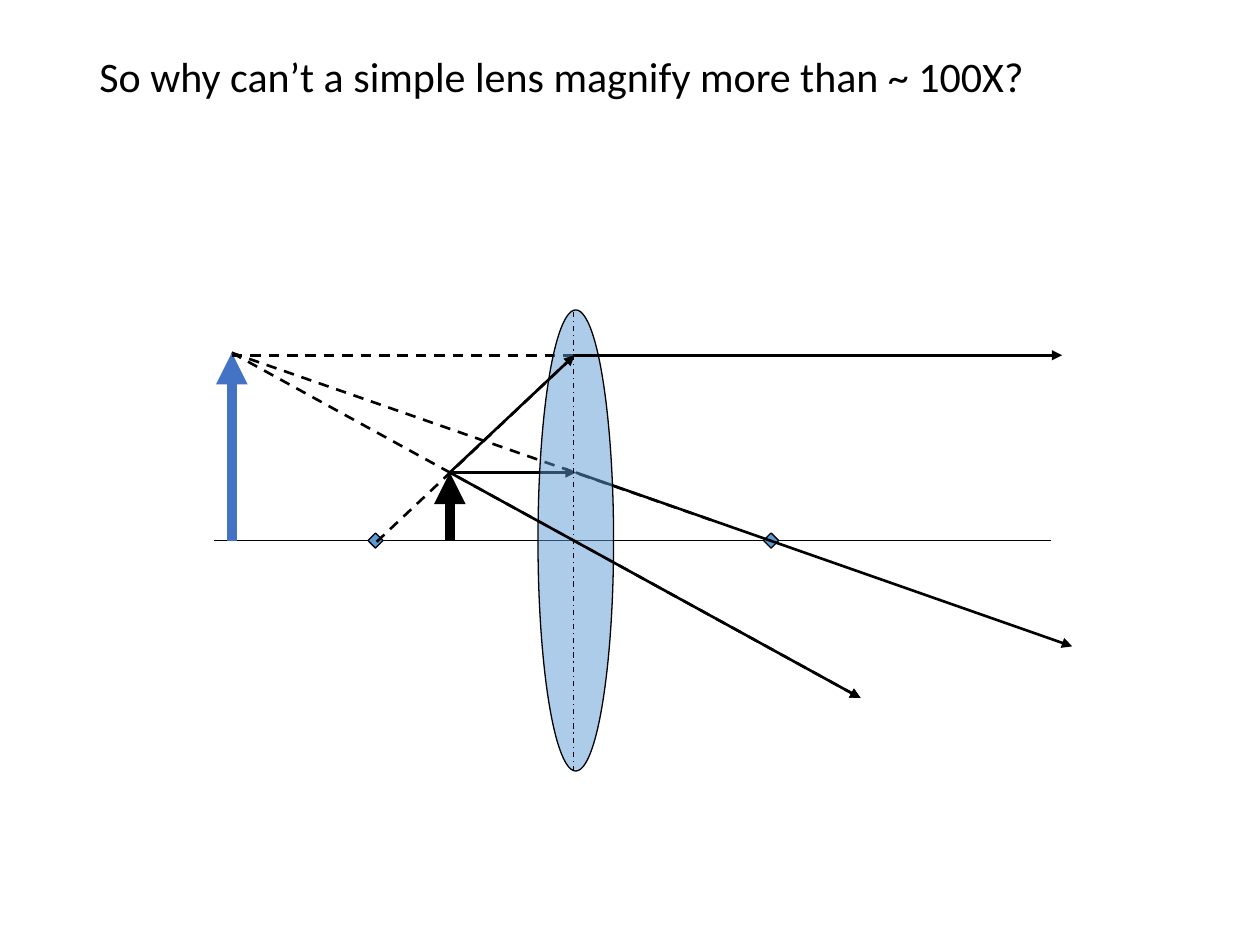
"""Build a ray diagram of a simple magnifying lens."""
from lxml import etree
from pptx import Presentation
from pptx.dml.color import RGBColor
from pptx.enum import dml, shapes, text
from pptx.oxml import ns
from pptx.util import Inches, Pt

BLACK = RGBColor(0x00, 0x00, 0x00)
IMAGE_BLUE = RGBColor(0x44, 0x72, 0xC4)
LENS_BLUE = RGBColor(0x5B, 0x9B, 0xD5)
DASH = dml.MSO_LINE.DASH
DASH_DOT = dml.MSO_LINE.DASH_DOT

prs = Presentation()
prs.slide_width, prs.slide_height = Inches(10), Inches(7.5)
slide = prs.slides.add_slide(prs.slide_layouts[6])


def draw_line(start, end, width=1.5, color=BLACK, dash=None, arrow=False):
    ends = [Inches(value) for value in (*start, *end)]
    segment = slide.shapes.add_connector(shapes.MSO_CONNECTOR.STRAIGHT, *ends)
    segment.line.color.rgb = color
    segment.line.width = Pt(width)
    if dash:
        segment.line.dash_style = dash
    if arrow:
        tip = etree.SubElement(segment.line._get_or_add_ln(), ns.qn("a:tailEnd"))
        tip.set("type", "triangle")
    etree.SubElement(segment._element.spPr, ns.qn("a:effectLst"))


def draw_shape(kind, left, top, width, height):
    box = [Inches(value) for value in (left, top, width, height)]
    outline = slide.shapes.add_shape(kind, *box)
    outline.shadow.inherit = False
    outline.fill.solid()
    outline.fill.fore_color.rgb = LENS_BLUE
    outline.line.color.rgb = BLACK
    outline.line.width = Pt(0.75)
    return outline


axis_y = 4.29
object_foot, object_tip = (3.57, axis_y), (3.57, 3.75)
image_foot, image_tip = (1.84, axis_y), (1.84, 2.8)
parallel_hit = (4.57, 3.75)
focal_hit = (4.56, 2.82)
central_end = (6.83, 5.54)

draw_line((1.7, axis_y), (8.34, axis_y), width=0.75)
for focus_left in (6.06, 2.92):
    draw_shape(shapes.MSO_SHAPE.DIAMOND, focus_left, axis_y - 0.06, 0.12, 0.12)

draw_line(object_foot, object_tip, width=6, arrow=True)
draw_line(object_tip, parallel_hit, arrow=True)
draw_line(parallel_hit, (8.51, 5.13), arrow=True)
draw_line(image_tip, (5.68, 4.14), dash=DASH)
draw_line(image_tip, central_end, dash=DASH, arrow=True)
draw_line(image_foot, image_tip, width=6, color=IMAGE_BLUE, arrow=True)
draw_line((1.84, 2.82), (4.57, 2.82), dash=DASH)

lens = draw_shape(shapes.MSO_SHAPE.OVAL, 4.27, 2.46, 0.6, 3.66)
lens_color = lens._element.spPr.find(".//" + ns.qn("a:srgbClr"))
etree.SubElement(lens_color, ns.qn("a:alpha")).set("val", "50000")

draw_line(object_tip, central_end, arrow=True)
draw_line((2.99, 4.3), focal_hit, dash=DASH)
draw_line(object_tip, focal_hit, arrow=True)
draw_line((4.55, 2.82), (8.43, 2.82), arrow=True)

question = slide.shapes.add_textbox(Inches(0.69), Inches(0.4), Inches(8.62), Inches(1.45))
question.text_frame.word_wrap = True
question.text_frame.vertical_anchor = text.MSO_ANCHOR.TOP
wording = question.text_frame.paragraphs[0]
wording.text = "So why can’t a simple lens magnify more than ~ 100X?"
wording.line_spacing = 0.9
for name, value in {"name": "Calibri", "size": Pt(24)}.items():
    setattr(wording.runs[0].font, name, value)
wording.runs[0].font.color.rgb = BLACK

draw_line((4.55, 6.12), (4.55, 2.45), width=0.75, dash=DASH_DOT)

prs.save("out.pptx")
